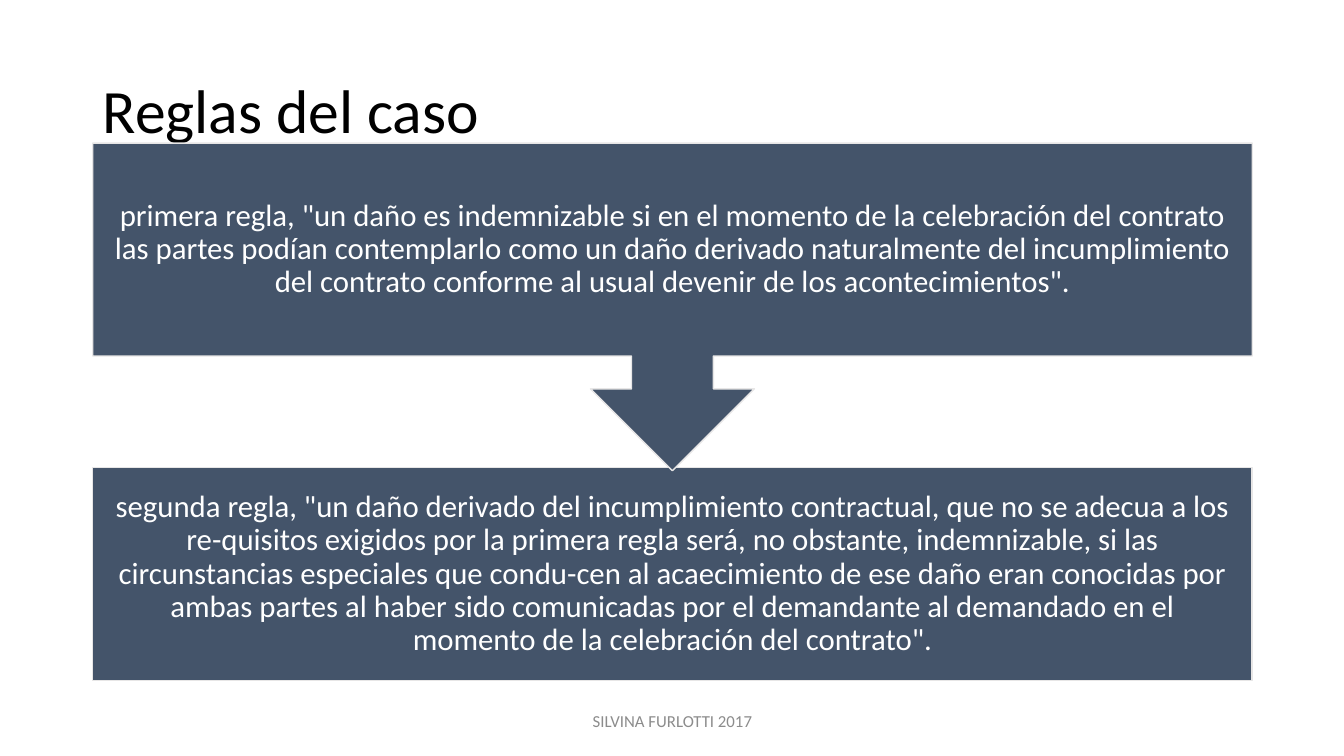
from dataclasses import dataclass

from pptx import Presentation
from pptx.dml.color import RGBColor
from pptx.enum.shapes import MSO_SHAPE
from pptx.enum.text import MSO_ANCHOR, PP_ALIGN
from pptx.util import Inches, Pt

RECT = MSO_SHAPE.RECTANGLE
CALLOUT = MSO_SHAPE.DOWN_ARROW_CALLOUT
MIDDLE = MSO_ANCHOR.MIDDLE
LEFT, CENTER = PP_ALIGN.LEFT, PP_ALIGN.CENTER


@dataclass(frozen=True)
class Theme:
    font: str = "Calibri"
    title_color: str = "000000"
    rule_color: str = "FFFFFF"
    footer_color: str = "8C8C8C"
    fill: str = "44546A"
    line: str = "E7E6E6"
    title_size: float = 44
    rule_size: float = 22
    footer_size: float = 12


# Grid: 23 columns between the side margins, 15 rows over the full height
WIDTH, HEIGHT, MARGIN = 13.33, 7.5, 0.92
COLS, ROWS = 23, 15
COL = 11.5 / COLS
ROW = HEIGHT / ROWS


def write(tf, text, *, font, size, color, align=LEFT, spacing=1.0, inset=None):
    tf.word_wrap = True
    tf.vertical_anchor = MIDDLE
    if inset is not None:
        tf.margin_left = tf.margin_right = Inches(inset)
        tf.margin_top = tf.margin_bottom = Inches(inset)
    p = tf.paragraphs[0]
    p.alignment = align
    p.line_spacing = spacing
    r = p.add_run()
    r.text = text
    r.font.name = font
    r.font.size = Pt(size)
    r.font.color.rgb = RGBColor.from_string(color)


class SlideBuilder:
    def __init__(self, s, theme):
        self.s = s
        self.theme = theme

    def box(self, col, row, cols, rows):
        return (Inches(MARGIN + col * COL), Inches(row * ROW),
                Inches(cols * COL), Inches(rows * ROW))

    def text(self, text, cell, **fmt):
        tb = self.s.shapes.add_textbox(*self.box(*cell))
        write(tb.text_frame, text, font=self.theme.font, **fmt)

    def rule(self, kind, text, cell):
        t = self.theme
        sp = self.s.shapes.add_shape(kind, *self.box(*cell))
        sp.shadow.inherit = False
        sp.fill.solid()
        sp.fill.fore_color.rgb = RGBColor.from_string(t.fill)
        sp.line.color.rgb = RGBColor.from_string(t.line)
        sp.line.width = Pt(1)
        write(sp.text_frame, text, font=t.font, size=t.rule_size,
              color=t.rule_color, align=CENTER, spacing=0.9, inset=0.17)


def main():
    prs = Presentation()
    prs.slide_width, prs.slide_height = Inches(WIDTH), Inches(HEIGHT)
    theme = Theme()
    slide = SlideBuilder(prs.slides.add_slide(prs.slide_layouts[6]), theme)

    # Title
    slide.text("Reglas del caso", (0, 0.8, COLS, 2.9), size=theme.title_size,
               color=theme.title_color, spacing=0.9)

    # Second rule, below the tip of the first rule's arrow
    slide.rule(RECT, 'segunda regla, "un daño derivado del incumplimiento '
               'contractual, que no se adecua a los re-quisitos exigidos por '
               'la primera regla será, no obstante, indemnizable, si las '
               'circunstancias especiales que condu-cen al acaecimiento de '
               'ese daño eran conocidas por ambas partes al haber sido '
               'comunicadas por el demandante al demandado en el momento de '
               'la celebración del contrato".', (0, 9.28, COLS, 4.22))

    # First rule, whose arrow leads to the second
    slide.rule(CALLOUT, 'primera regla, "un daño es indemnizable si en el '
               'momento de la celebración del contrato las partes podían '
               'contemplarlo como un daño derivado naturalmente del '
               'incumplimiento del contrato conforme al usual devenir de los '
               'acontecimientos".', (0, 2.84, COLS, 6.5))

    # Footer
    slide.text("SILVINA FURLOTTI 2017", (7, 13.9, 9, 0.8),
               size=theme.footer_size, color=theme.footer_color, align=CENTER)

    prs.save("out.pptx")


if __name__ == "__main__":
    main()
